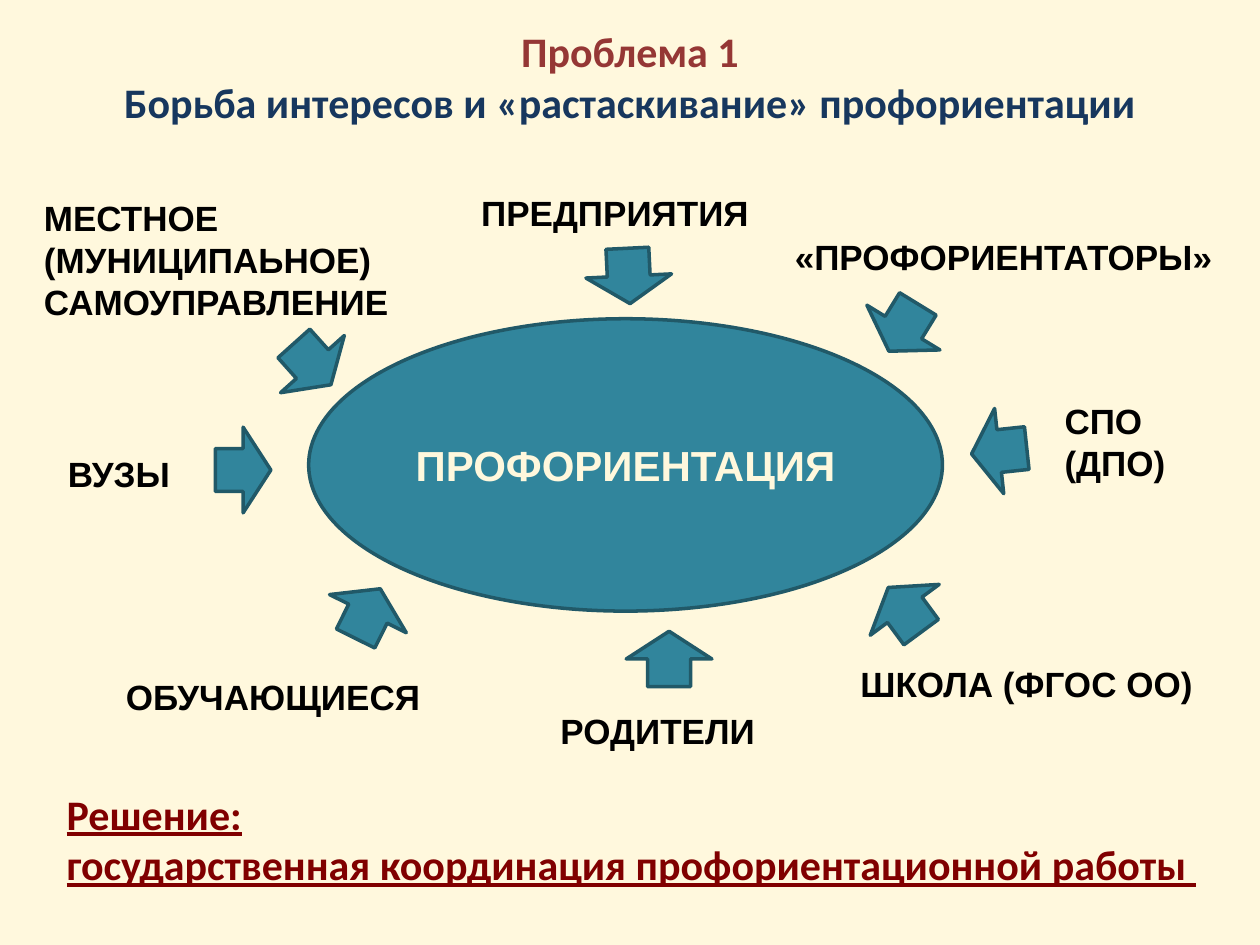
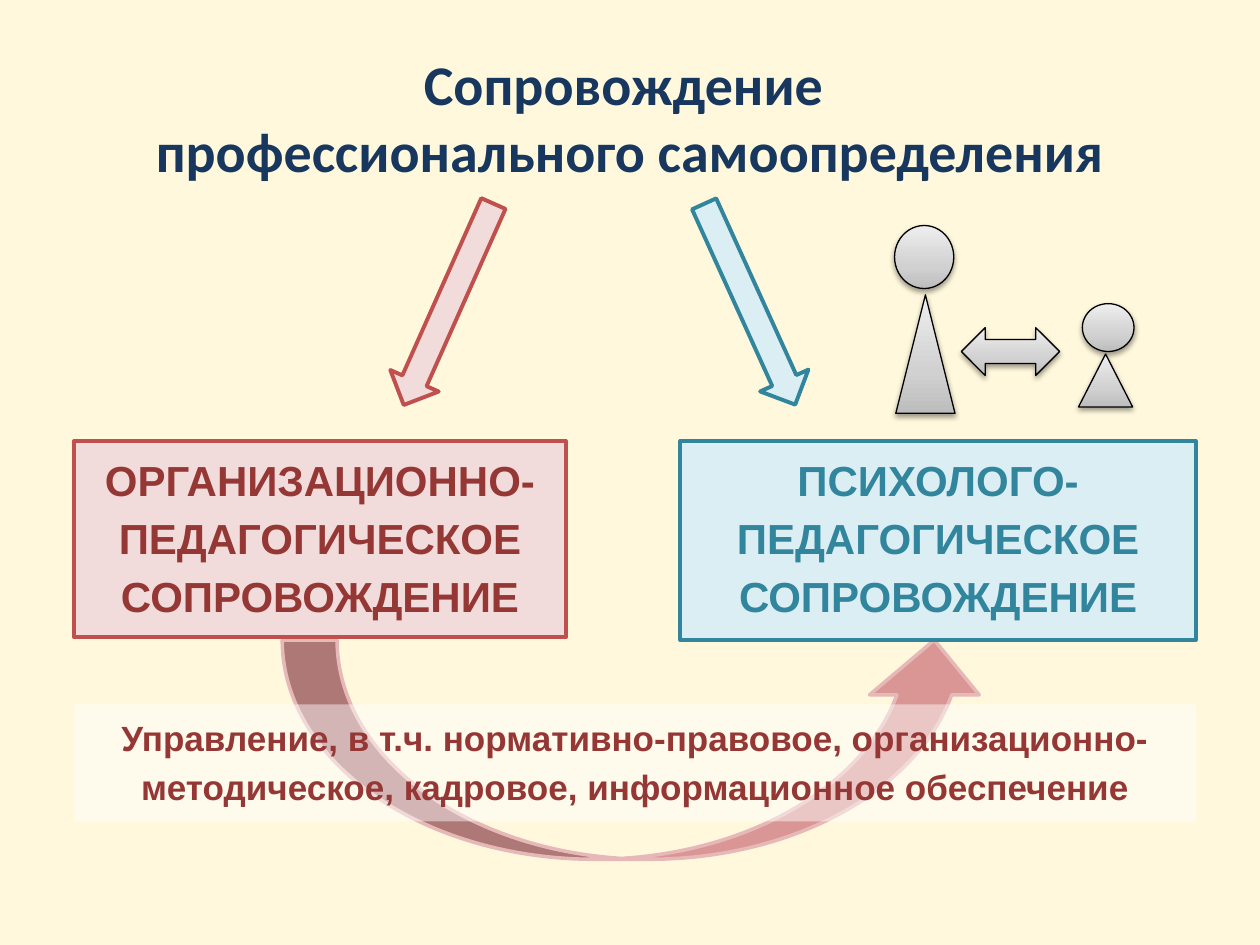
import copy
import dataclasses

import lxml.etree
import pptx
import pptx.dml.color
import pptx.enum.shapes
import pptx.enum.text
import pptx.oxml.ns
import pptx.util

RGBColor = pptx.dml.color.RGBColor
SHAPE = pptx.enum.shapes.MSO_SHAPE
ALIGN = pptx.enum.text.PP_ALIGN
ANCHOR = pptx.enum.text.MSO_ANCHOR

CREAM = RGBColor(0xFF, 0xF8, 0xDD)
WHITE = RGBColor(0xFF, 0xFF, 0xFF)
BLACK = RGBColor(0x00, 0x00, 0x00)
NAVY = RGBColor(0x17, 0x37, 0x5E)
BRICK = RGBColor(0x95, 0x37, 0x35)
MAROON = RGBColor(0x80, 0x00, 0x00)
RED = RGBColor(0xC0, 0x50, 0x4D)
ROSE = RGBColor(0xD9, 0x96, 0x94)
PINK = RGBColor(0xE6, 0xB9, 0xB8)
PALE_PINK = RGBColor(0xF2, 0xDC, 0xDB)
TEAL = RGBColor(0x31, 0x85, 0x9C)
DARK_TEAL = RGBColor(0x21, 0x59, 0x68)
PALE_TEAL = RGBColor(0xDB, 0xEE, 0xF4)
GREY_STOPS = [
    (0, RGBColor(0xBD, 0xBD, 0xBD)),
    (0.35, RGBColor(0xD1, 0xD1, 0xD1)),
    (1, RGBColor(0xEE, 0xEE, 0xEE)),
]

WIDTH, HEIGHT = pptx.util.Inches(10), pptx.util.Inches(7.5)
COLUMN, ROW = WIDTH // 100, HEIGHT // 75


@dataclasses.dataclass
class Box:
    """A rectangle in columns and rows of the slide grid (100 by 75)."""
    column: float
    row: float
    columns: float
    rows: float

    def inside(self, column, row, columns, rows):
        return Box(self.column + column, self.row + row, columns, rows)

    def lengths(self):
        return (round(self.column * COLUMN), round(self.row * ROW),
                round(self.columns * COLUMN), round(self.rows * ROW))


def format_runs(paragraph, size, color, font="Arial", underline=None):
    for run in paragraph.runs:
        run.font.name = font
        run.font.size = pptx.util.Pt(size)
        run.font.bold = True
        run.font.underline = underline
        run.font.color.rgb = color


def add_figure(slide, kind, box, fill=None, line=None, line_width=2.0, rotation=0):
    shape = slide.shapes.add_shape(kind, *box.lengths())
    shape.shadow.inherit = False
    shape.rotation = rotation
    if fill is not None:
        shape.fill.solid()
        shape.fill.fore_color.rgb = fill
    if line is None:
        shape.line.fill.background()
    else:
        shape.line.color.rgb = line
        shape.line.width = pptx.util.Pt(line_width)
    return shape


def add_text(slide, box, text, size, color, font="Arial", underline=None):
    frame = slide.shapes.add_textbox(*box.lengths()).text_frame
    frame.word_wrap = True
    frame.text = text
    for paragraph in frame.paragraphs:
        format_runs(paragraph, size, color, font, underline)
    return frame


def write_panel_text(shape, text, size, color):
    frame = shape.text_frame
    frame.text = text
    frame.vertical_anchor = ANCHOR.TOP
    paragraph = frame.paragraphs[0]
    paragraph.alignment = ALIGN.CENTER
    paragraph.line_spacing = 1.15
    paragraph.space_after = pptx.util.Pt(10)
    format_runs(paragraph, size, color)


def add_titled_slide(presentation, box, title, size):
    slide = presentation.slides.add_slide(presentation.slide_layouts[5])
    shape = slide.shapes.title
    shape.left, shape.top, shape.width, shape.height = box.lengths()
    frame = shape.text_frame
    frame.text = title
    frame.vertical_anchor = ANCHOR.MIDDLE
    frame.auto_size = pptx.enum.text.MSO_AUTO_SIZE.NONE
    frame.paragraphs[0].alignment = ALIGN.CENTER
    format_runs(frame.paragraphs[0], size, NAVY, "Calibri")
    return slide


def draw_interests(slide, box):
    """Draw the central ellipse with the interested parties and their arrows."""
    center = add_figure(slide, SHAPE.OVAL, box.inside(22, 10.8, 50.3, 23.2), TEAL, DARK_TEAL)
    center.text_frame.text = "ПРОФОРИЕНТАЦИЯ"
    center.text_frame.word_wrap = False
    center.text_frame.vertical_anchor = ANCHOR.MIDDLE
    center.text_frame.paragraphs[0].alignment = ALIGN.CENTER
    format_runs(center.text_frame.paragraphs[0], 24, CREAM)

    # label, its place, then the arrow's column, row and rotation
    parties = [
        ("ПРЕДПРИЯТИЯ", (34.7, 0.2, 23.4, 4), (44, 5.2, 357.2)),
        ("МЕСТНОЕ (МУНИЦИПАЬНОЕ) САМОУПРАВЛЕНИЕ", (0, 0.6, 30.6, 10.1), (18.9, 12.2, 318.1)),
        ("ВУЗЫ", (1.9, 20.9, 15.1, 4), (13.4, 20.6, 270)),
        ("СПО\n(ДПО)", (81, 16.7, 11.5, 7.7), (73.4, 19.1, 83.9)),
        ("«ПРОФОРИЕНТАТОРЫ»", (59.6, 3.7, 35.9, 4), (65.8, 9.3, 31.5)),
        ("ОБУЧАЮЩИЕСЯ", (6.5, 38.6, 25.5, 4), (23.3, 32, 206.4)),
        ("РОДИТЕЛИ", (41, 41.3, 18.3, 4), (47.2, 35.6, 180)),
        ("ШКОЛА (ФГОС ОО)", (64.8, 37.6, 28.8, 4.4), (65.9, 31.7, 143.6)),
    ]
    for label, place, (column, row, rotation) in parties:
        add_text(slide, box.inside(*place), label, 20, BLACK)
        add_figure(slide, SHAPE.DOWN_ARROW, box.inside(column, row, 6.8, 4.4),
                   TEAL, DARK_TEAL, rotation=rotation)


def draw_solution(slide, box):
    text = "Решение:\nгосударственная координация профориентационной работы "
    frame = add_text(slide, box, text, 24, MAROON, "Calibri", underline=True)
    frame.vertical_anchor = ANCHOR.MIDDLE


def draw_management(slide, box):
    """Draw the curved arrow and the translucent band over it."""
    add_figure(slide, SHAPE.CURVED_UP_ARROW, box.inside(16.5, 0, 56.1, box.rows), ROSE, PINK)
    band = add_figure(slide, SHAPE.RECTANGLE, box.inside(0, 5.1, box.columns, 9.3), WHITE)
    color = band.element.xpath("./p:spPr/a:solidFill/a:srgbClr")[0]
    lxml.etree.SubElement(color, pptx.oxml.ns.qn("a:alpha"), val="46000")
    write_panel_text(band, "Управление, в т.ч. нормативно-правовое, организационно-"
                     "методическое, кадровое, информационное обеспечение", 20, BRICK)


def draw_branch(slide, box, text, colors, arrow_column, rotation):
    """Draw a slanted arrow above a panel that fills the foot of the box."""
    fill, line, text_color = colors
    panel_row = 19.6
    panel = add_figure(slide, SHAPE.RECTANGLE,
                       box.inside(0, panel_row, box.columns, box.rows - panel_row),
                       fill, line, 2.25)
    write_panel_text(panel, text, 24, text_color)
    add_figure(slide, SHAPE.DOWN_ARROW, box.inside(arrow_column, 0, 4.2, 17.5),
               fill, line, 2.25, rotation)


def style_as_grey_relief(shape):
    shape.fill.gradient()
    shape.fill.gradient_angle = 90
    first_stop = shape.element.xpath("./p:spPr/a:gradFill/a:gsLst/a:gs")[0]
    first_stop.addnext(copy.deepcopy(first_stop))
    for stop, (position, color) in zip(shape.fill.gradient_stops, GREY_STOPS):
        stop.position = position
        stop.color.rgb = color
    effects = shape.element.xpath("./p:spPr/a:effectLst")[0]
    shadow = lxml.etree.SubElement(
        effects, pptx.oxml.ns.qn("a:outerShdw"), rotWithShape="0", dir="5400000",
        blurRad=str(int(pptx.util.Pt(3.1))), dist=str(int(pptx.util.Pt(1.6))))
    color = lxml.etree.SubElement(shadow, pptx.oxml.ns.qn("a:srgbClr"), val=str(BLACK))
    lxml.etree.SubElement(color, pptx.oxml.ns.qn("a:alpha"), val="38000")


def draw_adult_and_child(slide, box):
    figures = [
        (SHAPE.ISOSCELES_TRIANGLE, (0.1, 5.5, 4.7, 9.4)),
        (SHAPE.OVAL, (14.9, 6.2, 4.1, 3.8)),
        (SHAPE.OVAL, (0, 0, 4.7, 5)),
        (SHAPE.ISOSCELES_TRIANGLE, (14.6, 10.2, 4.3, 4.2)),
        (SHAPE.LEFT_RIGHT_ARROW, (5.3, 8.1, 7.8, 3.8)),
    ]
    for kind, place in figures:
        style_as_grey_relief(add_figure(slide, kind, box.inside(*place), line=BLACK, line_width=0.75))


def build_problem_slide(presentation):
    slide = add_titled_slide(
        presentation, Box(5, -0.2, 90, 12.5),
        "Проблема 1\vБорьба интересов и «растаскивание» профориентации", 24)
    slide.shapes.title.text_frame.paragraphs[0].runs[0].font.color.rgb = BRICK
    draw_interests(slide, Box(2.5, 14.5, 95.5, 45.5))
    draw_solution(slide, Box(4.3, 60.3, 93.7, 12.5))


def build_support_slide(presentation):
    slide = add_titled_slide(
        presentation, Box(5, 3, 90, 12.5),
        "Сопровождение \vпрофессионального самоопределения", 32)
    draw_management(slide, Box(5.9, 50.8, 89, 17.4))
    draw_branch(slide, Box(5.9, 15.4, 39, 35.2),
                "ОРГАНИЗАЦИОННО-ПЕДАГОГИЧЕСКОЕ СОПРОВОЖДЕНИЕ",
                (PALE_PINK, RED, BRICK), 27.6, 24)
    draw_branch(slide, Box(54, 15.4, 40.9, 35.4),
                "ПСИХОЛОГО-ПЕДАГОГИЧЕСКОЕ СОПРОВОЖДЕНИЕ",
                (PALE_TEAL, TEAL, TEAL), 3.4, 335.6)
    draw_adult_and_child(slide, Box(71, 17.9, 19, 14.9))


def main():
    presentation = pptx.Presentation()
    presentation.slide_width, presentation.slide_height = WIDTH, HEIGHT
    background = presentation.slide_master.background.fill
    background.solid()
    background.fore_color.rgb = CREAM
    build_problem_slide(presentation)
    build_support_slide(presentation)
    presentation.save("out.pptx")


if __name__ == "__main__":
    main()
